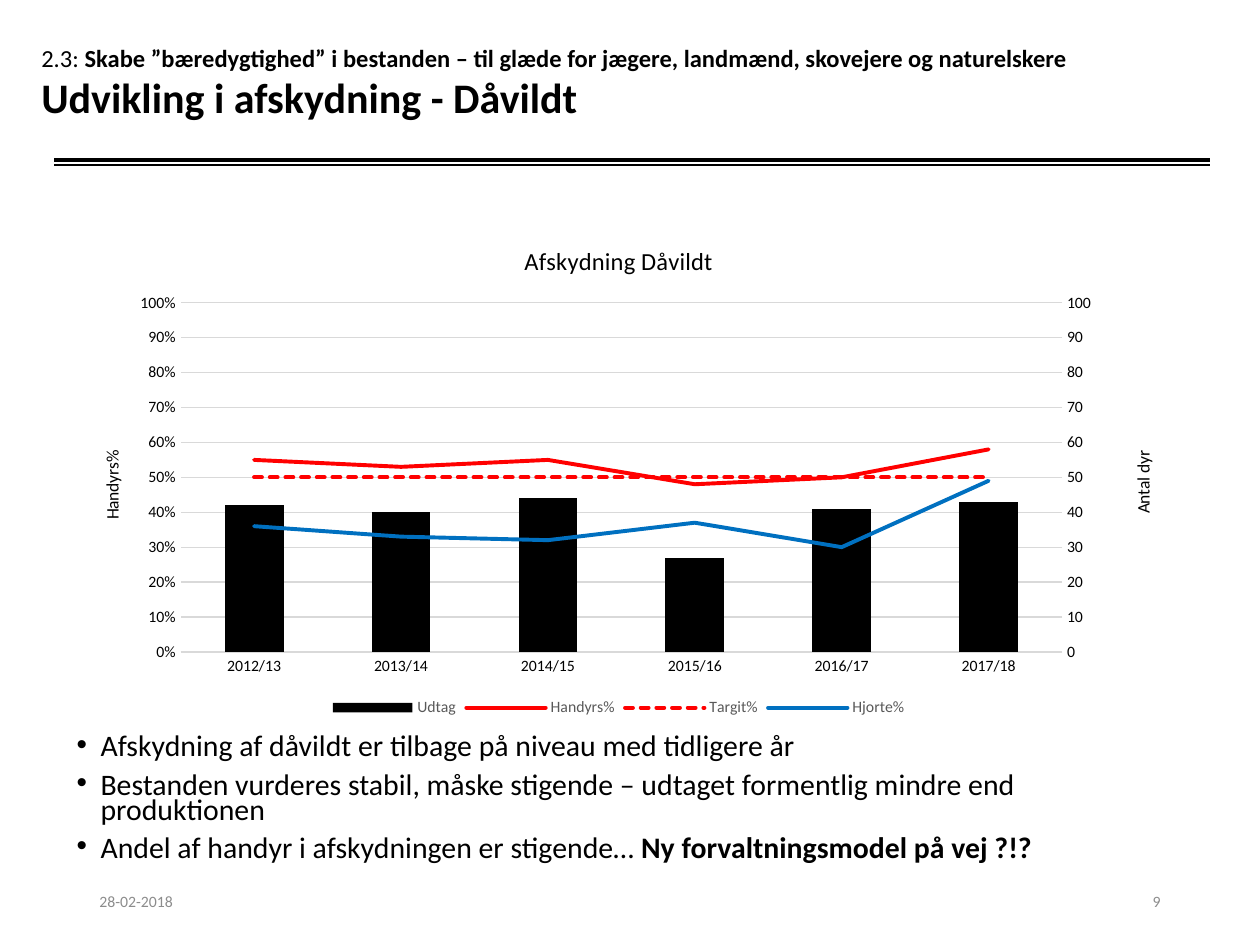
from copy import deepcopy
from dataclasses import dataclass

from lxml import etree
from pptx import Presentation
from pptx import util as u
from pptx.chart import axis as ax
from pptx.chart import data as cd
from pptx.dml.color import RGBColor
from pptx.enum import chart as ch
from pptx.enum import dml, shapes, text
from pptx.oxml import parse_xml
from pptx.oxml.ns import nsdecls, qn

WIDE, HIGH = u.Inches(10), u.Inches(7.5)


@dataclass(frozen=True)
class Theme:
    font: str = "Calibri"
    ink: str = "000000"
    mute: str = "8C8C8C"
    key: str = "595959"
    grid: str = "D9D9D9"
    red: str = "FF0000"
    blue: str = "0070C0"
    head: float = 24
    sub: float = 14
    body: float = 17
    axis: float = 10
    small: float = 9


T = Theme()

YEARS = [f"{y}/{y - 1999}" for y in range(2012, 2018)]
BARS = ("Udtag", [42, 40, 44, 27, 41, 43])
# name, values, colour, dashed
LINES = [
    ("Handyrs%", [0.55, 0.53, 0.55, 0.48, 0.5, 0.58], T.red, False),
    ("Targit%", [0.5] * 6, T.red, True),
    ("Hjorte%", [0.36, 0.33, 0.32, 0.37, 0.3, 0.49], T.blue, False),
]


def rgb(tone):
    return RGBColor.from_string(tone)


def place(x, y, w, h):
    """Turn percent of the slide's size into lengths."""
    return [int(side * part / 100) for side, part in
            zip((WIDE, HIGH, WIDE, HIGH), (x, y, w, h))]


def style(font, size, tone=T.ink, bold=False):
    font.name, font.size, font.bold = T.font, u.Pt(size), bold
    font.color.rgb = rgb(tone)


def add_run(para, words, size, tone=T.ink, bold=False):
    run = para.add_run()
    run.text = words
    style(run.font, size, tone, bold)


def add_box(slide, spot, anchor=text.MSO_ANCHOR.MIDDLE):
    frame = slide.shapes.add_textbox(*place(*spot)).text_frame
    frame.word_wrap = True
    frame.vertical_anchor = anchor
    return frame


def add_rule(slide, y, width):
    x, top, w, _ = place(4.3, y, 91.7, 0)
    line = slide.shapes.add_connector(
        shapes.MSO_CONNECTOR.STRAIGHT, x, top, x + w, top)
    line.line.color.rgb = rgb(T.ink)
    line.line.width = u.Pt(width)
    etree.SubElement(line._element.spPr, qn("a:effectLst"))


def add_head(slide):
    para = add_box(slide, (2.3, 0.93, 90, 15.6)).paragraphs[0]
    add_run(para, "2.3: ", T.sub)
    add_run(para, "Skabe ”bæredygtighed” i bestanden – til glæde for jægere, "
                  "landmænd, skovejere og naturelskere", T.sub, bold=True)
    para.add_line_break()
    add_run(para, "Udvikling i afskydning - Dåvildt", T.head, bold=True)


def add_list(slide, items):
    frame = add_box(slide, (5.1, 77.33, 90, 12.4), text.MSO_ANCHOR.TOP)
    for i, runs in enumerate(items):
        para = frame.add_paragraph() if i else frame.paragraphs[0]
        para.line_spacing = 0.7
        para.space_before = u.Pt(7.5 if i else 0)
        props = para._p.get_or_add_pPr()
        props.set("marL", str(u.Inches(0.19)))
        props.set("indent", str(-u.Inches(0.19)))
        etree.SubElement(props, qn("a:buFont")).set("typeface", "Arial")
        etree.SubElement(props, qn("a:buChar")).set("char", "•")
        for words, bold in runs:
            add_run(para, words, T.body, bold=bold)


def add_foot(slide, x, words, align):
    para = add_box(slide, (x, 92.67, 22.5, 5.33)).paragraphs[0]
    para.alignment = align
    add_run(para, words, T.small, T.mute)


def lay_out(node, at, inner=False, **spots):
    """Fix the place of a chart part, as shares of the chart."""
    for old in node.findall(qn("c:layout")):
        node.remove(old)
    parts = '<c:layoutTarget val="inner"/>' if inner else ""
    parts += "".join(f'<c:{k}Mode val="edge"/>' for k in "xy")
    parts += "".join(f'<c:{k} val="{v}"/>' for k, v in spots.items())
    node.insert(at, parse_xml(
        f'<c:layout {nsdecls("c")}><c:manualLayout>{parts}'
        f'</c:manualLayout></c:layout>'))


def set_val(node, tag, value):
    node.find(qn(tag)).set("val", value)


def split_plot(chart):
    """Move all series but the first to lines; give left and right axes."""
    area = chart._chartSpace.chart.plotArea
    bar, cat, val = (area.find(qn(f"c:{k}"))
                     for k in ("barChart", "catAx", "valAx"))
    line = parse_xml(
        f'<c:lineChart {nsdecls("c")}><c:grouping val="standard"/>'
        f'<c:varyColors val="0"/></c:lineChart>')
    for ser in bar.findall(qn("c:ser"))[1:]:
        for flag in ser.findall(qn("c:invertIfNegative")):
            ser.remove(flag)
        line.append(ser)
    etree.SubElement(line, qn("c:marker")).set("val", "1")
    bar.addnext(line)

    cat2, val2 = deepcopy(cat), deepcopy(val)
    val.addnext(cat2)
    cat2.addnext(val2)
    for node, own, other in ((cat2, "5001", "5002"), (val2, "5002", "5001")):
        set_val(node, "c:axId", own)
        set_val(node, "c:crossAx", other)
        etree.SubElement(line, qn("c:axId")).set("val", own)
    set_val(cat2, "c:delete", "1")
    for node, side, cross in ((val, "r", "max"), (val2, "l", "min")):
        set_val(node, "c:axPos", side)
        set_val(node, "c:crosses", cross)
    return ax.ValueAxis(val2), ax.ValueAxis(val)


def set_axis(axis, name, top, form, x):
    axis.minimum_scale, axis.maximum_scale = 0, top
    axis.major_unit = top / 10
    axis.major_tick_mark = ch.XL_TICK_MARK.NONE
    axis.format.line.fill.background()
    axis.tick_labels.number_format = form
    axis.tick_labels.number_format_is_linked = False
    style(axis.tick_labels.font, T.small)
    title = axis.axis_title
    add_run(title.text_frame.paragraphs[0], name, T.axis)
    title.text_frame._txBody.bodyPr.set("rot", "-5400000")
    lay_out(title._element, 1, x=x, y=0.45)


def add_plot(slide):
    data = cd.CategoryChartData()
    data.categories = YEARS
    data.add_series(*BARS, number_format="0")
    for name, vals, *_ in LINES:
        data.add_series(name, vals, number_format="0%")
    chart = slide.shapes.add_chart(
        ch.XL_CHART_TYPE.COLUMN_CLUSTERED,
        *place(5.1, 23.6, 88, 52.8), data).chart
    style(chart.font, T.axis)
    chart.has_title = True
    add_run(chart.chart_title.text_frame.paragraphs[0],
            "Afskydning Dåvildt", T.sub)
    chart.has_legend = True
    chart.legend.position = ch.XL_LEGEND_POSITION.BOTTOM
    chart.legend.include_in_layout = False
    style(chart.legend.font, T.small, T.key)

    # Axes
    chart.value_axis.has_major_gridlines = False
    left, right = split_plot(chart)
    set_axis(right, "Antal dyr", 100, "0", 0.96)
    set_axis(left, "Handyrs%", 1, "0%", 0.03)
    right.has_major_gridlines = True
    base = chart.category_axis
    base.major_tick_mark = ch.XL_TICK_MARK.NONE
    style(base.tick_labels.font, T.small)
    for line in (right.major_gridlines.format.line, base.format.line):
        line.color.rgb = rgb(T.grid)
        line.width = u.Pt(0.75)
    lay_out(chart._chartSpace.chart.plotArea, 0, True,
            x=0.105, y=0.16, w=0.795, h=0.7)

    # Series
    cols, curves = chart.plots
    cols.gap_width, cols.vary_by_categories = 150, False
    fill = cols.series[0].format.fill
    fill.solid()
    fill.fore_color.rgb = rgb(T.ink)
    for ser, (_, _, tone, dash) in zip(curves.series, LINES):
        ser.smooth = False
        ser.marker.style = ch.XL_MARKER_STYLE.NONE
        line = ser.format.line
        line.color.rgb, line.width = rgb(tone), u.Pt(2.25)
        line._get_or_add_ln().set("cap", "rnd")
        if dash:
            line.dash_style = dml.MSO_LINE.SQUARE_DOT


def main():
    deck = Presentation()
    deck.slide_width, deck.slide_height = WIDE, HIGH
    slide = deck.slides.add_slide(deck.slide_layouts[6])
    # Heading and double rule
    add_rule(slide, 17.47, 1)
    add_rule(slide, 16.93, 2)
    add_head(slide)
    # Chart and findings
    add_plot(slide)
    add_list(slide, [
        [("Afskydning af dåvildt er tilbage på niveau med tidligere år", False)],
        [("Bestanden vurderes stabil, måske stigende – udtaget formentlig "
          "mindre end produktionen", False)],
        [("Andel af handyr i afskydningen er stigende… ", False),
         ("Ny forvaltningsmodel på vej ?!?", True)],
    ])
    # Footer
    add_foot(slide, 6.9, "28-02-2018", text.PP_ALIGN.LEFT)
    add_foot(slide, 70.6, "9", text.PP_ALIGN.RIGHT)
    deck.save("out.pptx")


if __name__ == "__main__":
    main()
